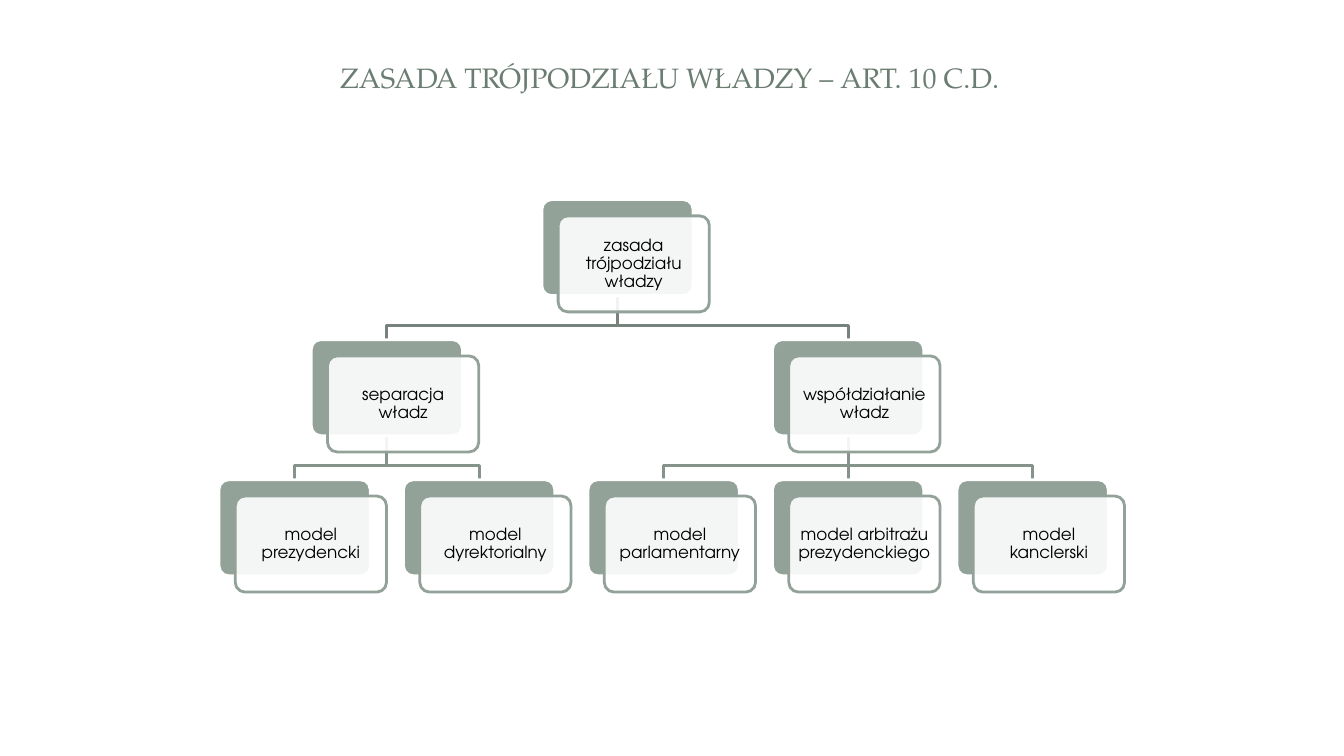
from dataclasses import dataclass
from typing import Any

from lxml import etree
from pptx import Presentation
from pptx import util as u
from pptx.dml.color import RGBColor
from pptx.enum import shapes, text
from pptx.oxml import ns

WHITE = RGBColor(0xFF, 0xFF, 0xFF)
BLACK = RGBColor(0x00, 0x00, 0x00)
SAGE = RGBColor(0x93, 0xA2, 0x99)
TITLE_GREEN = RGBColor(0x6B, 0x7D, 0x72)
BRANCH_COLORS = (RGBColor(0x76, 0x82, 0x7B), RGBColor(0x85, 0x93, 0x8B))

CARD_WIDTH, CARD_HEIGHT = u.Cm(3.81), u.Cm(2.42)
FIRST_LEFT, FIRST_TOP = u.Cm(5.52), u.Cm(5.03)
COLUMN_STEP, ROW_STEP = u.Cm(4.65), u.Cm(3.53)
PANEL_OFFSET = u.Cm(0.41)
BRANCH_DROP = u.Cm(0.76)
LINE_WIDTH = u.Pt(2)
PANEL_OPACITY = 90

TITLE_FONT = {"name": "TeX Gyre Pagella", "size": u.Pt(20)}
LABEL_FONT = {"name": "TeX Gyre Adventor", "size": u.Pt(12)}
CENTERED = {"alignment": text.PP_ALIGN.CENTER}
LABEL_PARAGRAPH = {**CENTERED, "line_spacing": 0.9}
MIDDLE_FRAME = {"word_wrap": True, "vertical_anchor": text.MSO_ANCHOR.MIDDLE}
INSETS = ("margin_left", "margin_top", "margin_right", "margin_bottom")
LABEL_FRAME = {**MIDDLE_FRAME, **dict.fromkeys(INSETS, u.Cm(0.13))}


@dataclass(frozen=True)
class Node:
    label: str
    column: float
    children: tuple["Node", ...] = ()


def leaf(label: str, column: int) -> Node:
    return Node(label, column)


def parent(label: str, *children: Node) -> Node:
    """Make a node centred over its first and last child."""
    return Node(label, (children[0].column + children[-1].column) / 2, children)


POWERS = parent(
    "zasada trójpodziału władzy",
    parent("separacja władz", leaf("model prezydencki", 0), leaf("model dyrektorialny", 1)),
    parent(
        "współdziałanie władz",
        leaf("model parlamentarny", 2),
        leaf("model arbitrażu prezydenckiego", 3),
        leaf("model kanclerski", 4),
    ),
)


def apply_format(target: Any, values: dict[str, Any]) -> None:
    for name, value in values.items():
        setattr(target, name, value)


def write_text(shape: Any, words: str, color: RGBColor, font: dict[str, Any],
               paragraph_format: dict[str, Any], frame_format: dict[str, Any]) -> None:
    apply_format(shape.text_frame, frame_format)
    paragraph = shape.text_frame.paragraphs[0]
    apply_format(paragraph, paragraph_format)
    run = paragraph.add_run()
    run.text = words
    apply_format(run.font, font)
    run.font.color.rgb = color


def set_line(shape: Any, color: RGBColor) -> None:
    shape.line.color.rgb = color
    shape.line.width = LINE_WIDTH


def add_card(slide: Any, left: int, top: int, fill: RGBColor, line: RGBColor,
             opacity: int = 100) -> Any:
    shape = slide.shapes.add_shape(
        shapes.MSO_SHAPE.ROUNDED_RECTANGLE, left, top, CARD_WIDTH, CARD_HEIGHT)
    shape.adjustments[0] = 0.1
    shape.shadow.inherit = False
    shape.fill.solid()
    shape.fill.fore_color.rgb = fill
    if opacity < 100:
        fill_color = next(shape.element.spPr.iter(ns.qn("a:srgbClr")))
        etree.SubElement(fill_color, ns.qn("a:alpha"), val=str(opacity * 1000))
    set_line(shape, line)
    return shape


def add_straight_branch(slide: Any, upper: Any, lower: Any) -> Any:
    line = slide.shapes.add_connector(shapes.MSO_CONNECTOR.STRAIGHT, 0, 0, 0, 0)
    line.begin_connect(upper, 2)
    line.end_connect(lower, 0)
    etree.SubElement(line.element.spPr, ns.qn("a:effectLst"))
    return line


def add_bent_branch(slide: Any, upper: Any, lower: Any) -> Any:
    start_x, end_x = (card.left + CARD_WIDTH // 2 for card in (upper, lower))
    start_y = upper.top + CARD_HEIGHT
    bend_y = start_y + BRANCH_DROP
    builder = slide.shapes.build_freeform(start_x, start_y)
    builder.add_line_segments(
        [(start_x, bend_y), (end_x, bend_y), (end_x, lower.top)], close=False)
    line = builder.convert_to_shape()
    line.fill.background()
    line.shadow.inherit = False
    return line


def add_branch(slide: Any, upper: Any, lower: Any, color: RGBColor) -> None:
    """Join two cards with a line that lies behind every card."""
    draw = add_straight_branch if upper.left == lower.left else add_bent_branch
    line = draw(slide, upper, lower)
    set_line(line, color)
    slide.shapes.element.insert(2, line.element)


def add_tree(slide: Any, node: Node, level: int = 0) -> Any:
    """Draw a node and everything below it; return the node's back card."""
    left = FIRST_LEFT + round(node.column * COLUMN_STEP)
    top = FIRST_TOP + level * ROW_STEP
    card = add_card(slide, left, top, SAGE, WHITE)
    panel = add_card(slide, left + PANEL_OFFSET, top + PANEL_OFFSET,
                     WHITE, SAGE, PANEL_OPACITY)
    write_text(panel, node.label, BLACK, LABEL_FONT, LABEL_PARAGRAPH, LABEL_FRAME)
    for child in node.children:
        add_branch(slide, card, add_tree(slide, child, level + 1), BRANCH_COLORS[level])
    return card


def main() -> None:
    presentation = Presentation()
    presentation.slide_width, presentation.slide_height = u.Cm(33.87), u.Cm(19.05)
    slide = presentation.slides.add_slide(presentation.slide_layouts[6])
    title = slide.shapes.add_textbox(u.Cm(5.41), u.Cm(1.14), u.Cm(22.94), u.Cm(1.6))
    write_text(title, "ZASADA TRÓJPODZIAŁU WŁADZY – ART. 10 C.D.",
               TITLE_GREEN, TITLE_FONT, CENTERED, MIDDLE_FRAME)
    add_tree(slide, POWERS)
    presentation.save("out.pptx")


if __name__ == "__main__":
    main()
